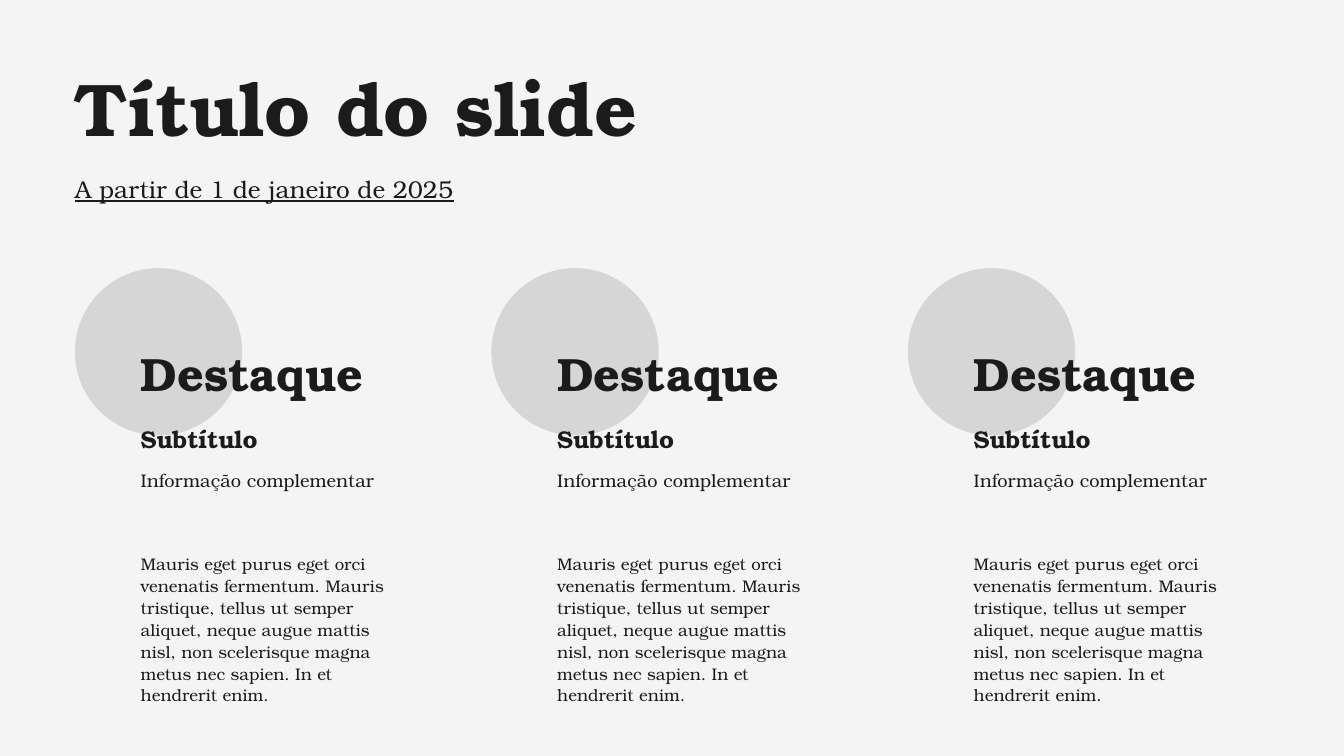
from dataclasses import dataclass

from pptx import Presentation
from pptx.dml.color import RGBColor
from pptx.enum.shapes import MSO_SHAPE as Preset
from pptx.enum.text import MSO_ANCHOR as Anchor, MSO_AUTO_SIZE as AutoSize, PP_ALIGN as Align
from pptx.shapes.base import BaseShape
from pptx.slide import Slide
from pptx.util import Pt

EMU_PER_PX = 9525
SLIDE_WIDTH, SLIDE_HEIGHT = 1920, 1080
BACKGROUND = RGBColor(0xF4, 0xF4, 0xF4)
INK = RGBColor(0x1B, 0x1B, 0x1B)
CIRCLE_GRAY = RGBColor(0xD6, 0xD6, 0xD6)
FONT = "TeX Gyre Bonum"

LEFT = 107
COLUMN_COUNT, COLUMN_PITCH = 3, 595
CIRCLE_TOP, CIRCLE_SIZE = 383, 239
TEXT_INDENT, TEXT_WIDTH = 94, 365
HEADER_WIDTH = 1173

FRAME_FORMAT = {
    "margin_left": 0,
    "margin_top": 0,
    "margin_right": 0,
    "margin_bottom": 0,
    "word_wrap": True,
    "auto_size": AutoSize.NONE,
    "vertical_anchor": Anchor.TOP,
}


@dataclass(frozen=True)
class TextBlock:
    """A single-paragraph text with its vertical place and type style."""

    text: str
    top: int
    height: int
    size: float
    line_spacing: float
    bold: bool = False
    underline: bool = False


TITLE = TextBlock("Título do slide", 89, 147, 80, 96, bold=True)
DATE = TextBlock("A partir de 1 de janeiro de 2025", 246, 49, 26, 33.8, underline=True)
COLUMN_BLOCKS = (
    TextBlock("Destaque", 492, 91, 50, 60, bold=True),
    TextBlock("Subtítulo", 602, 49, 26, 33.8, bold=True),
    TextBlock("Informação complementar", 668, 36, 19.5, 25.4),
    TextBlock(
        "Mauris eget purus eget orci venenatis fermentum. Mauris tristique, "
        "tellus ut semper aliquet, neque augue mattis nisl, non scelerisque "
        "magna metus nec sapien. In et hendrerit enim.",
        789, 189, 18, 23.4,
    ),
)


def px(length: int) -> int:
    """Turn pixels into EMU."""
    return length * EMU_PER_PX


def apply_format(target: object, values: dict) -> None:
    """Set each attribute named in values on the target."""
    for name, value in values.items():
        setattr(target, name, value)


def write_block(shape: BaseShape, block: TextBlock, left: int, width: int) -> None:
    """Place a text shape and fill it with a formatted block."""
    apply_format(shape, {
        "left": px(left),
        "top": px(block.top),
        "width": px(width),
        "height": px(block.height),
    })
    frame = shape.text_frame
    apply_format(frame, FRAME_FORMAT)
    paragraph = frame.paragraphs[0]
    apply_format(paragraph, {
        "alignment": Align.LEFT,
        "line_spacing": Pt(block.line_spacing),
        "space_before": Pt(0),
    })
    run = paragraph.add_run()
    run.text = block.text
    apply_format(run.font, {
        "name": FONT,
        "size": Pt(block.size),
        "bold": block.bold,
        "underline": block.underline,
    })
    run.font.color.rgb = INK


def draw_circle(slide: Slide, left: int) -> None:
    """Draw the plain circle behind a column heading."""
    circle = slide.shapes.add_shape(
        Preset.OVAL, px(left), px(CIRCLE_TOP), px(CIRCLE_SIZE), px(CIRCLE_SIZE)
    )
    circle.shadow.inherit = False
    circle.fill.solid()
    circle.fill.fore_color.rgb = CIRCLE_GRAY
    circle.line.fill.background()


def draw_column(slide: Slide, left: int) -> None:
    """Draw one highlight column with its circle and texts."""
    draw_circle(slide, left)
    for block in COLUMN_BLOCKS:
        text_box = slide.shapes.add_textbox(0, 0, 0, 0)
        write_block(text_box, block, left + TEXT_INDENT, TEXT_WIDTH)


def main() -> None:
    """Build the slide and save the presentation."""
    presentation = Presentation()
    presentation.slide_width = px(SLIDE_WIDTH)
    presentation.slide_height = px(SLIDE_HEIGHT)
    slide = presentation.slides.add_slide(presentation.slide_layouts[0])
    slide.background.fill.solid()
    slide.background.fill.fore_color.rgb = BACKGROUND

    for placeholder, block in zip(slide.placeholders, (TITLE, DATE)):
        write_block(placeholder, block, LEFT, HEADER_WIDTH)
    for column in range(COLUMN_COUNT):
        draw_column(slide, LEFT + column * COLUMN_PITCH)

    presentation.save("out.pptx")


if __name__ == "__main__":
    main()
